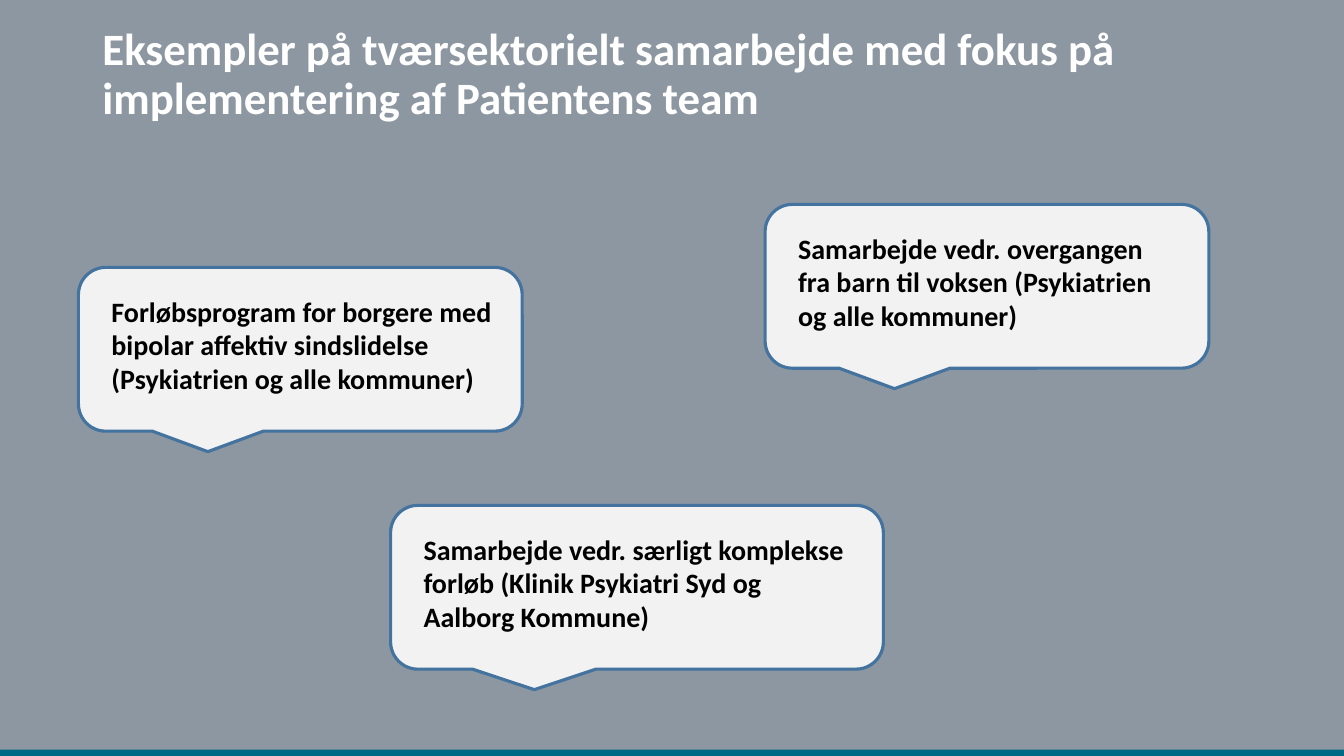
from dataclasses import dataclass

from pptx import Presentation
from pptx.dml.color import RGBColor
from pptx.enum import shapes, text
from pptx.util import Pt


@dataclass(frozen=True)
class Theme:
    font: str = "Calibri"
    title_size: int = 32
    callout_size: int = 20
    background: str = "8D97A1"
    footer: str = "006983"
    title: str = "FFFFFF"
    callout_fill: str = "F2F2F2"
    callout_line: str = "43739E"
    callout_text: str = "000000"


theme = Theme()
WIDTH, HEIGHT = 960, 540


def paint(fill, color):
    fill.solid()
    fill.fore_color.rgb = RGBColor.from_string(color)


def style(paragraph, size, color):
    paragraph.alignment = text.PP_ALIGN.LEFT
    font = paragraph.font
    font.name, font.size, font.bold = theme.font, Pt(size), True
    font.color.rgb = RGBColor.from_string(color)


# Slide and background
prs = Presentation()
prs.slide_width, prs.slide_height = Pt(WIDTH), Pt(HEIGHT)
slide = prs.slides.add_slide(prs.slide_layouts[5])
paint(slide.background.fill, theme.background)

# Footer strip
strip_height = 4.5
footer = slide.shapes.add_shape(
    shapes.MSO_SHAPE.RECTANGLE, 0, Pt(HEIGHT - strip_height), Pt(WIDTH), Pt(strip_height))
footer.shadow.inherit = False
paint(footer.fill, theme.footer)
footer.line.fill.background()

# Title
headline = slide.shapes.title
headline.left, headline.top, headline.width, headline.height = Pt(66), Pt(15), Pt(839), Pt(78)
headline.text_frame.text = (
    "Eksempler på tværsektorielt samarbejde med fokus på implementering af Patientens team")
headline.text_frame.word_wrap = True
headline.text_frame.auto_size = text.MSO_AUTO_SIZE.NONE
headline.text_frame.vertical_anchor = text.MSO_ANCHOR.MIDDLE
headline.text_frame.paragraphs[0].line_spacing = 0.9
style(headline.text_frame.paragraphs[0], theme.title_size, theme.title)

# Examples of collaboration: left, top, callout width, text width, wording
examples = [
    (56, 191, 317, 287,
     "Forløbsprogram for borgere med bipolar affektiv sindslidelse "
     "(Psykiatrien og alle kommuner)"),
    (279, 361, 352, 319,
     "Samarbejde vedr. særligt komplekse forløb (Klinik Psykiatri Syd og Aalborg Kommune)"),
    (546.5, 146, 317, 287,
     "Samarbejde vedr. overgangen fra barn til voksen (Psykiatrien og alle kommuner)"),
]
callout_height, text_height = 117, 101.5
indent_x, indent_y = 16.5, 15.5

for left, top, callout_width, text_width, wording in examples:
    callout = slide.shapes.add_shape(
        shapes.MSO_SHAPE.ROUNDED_RECTANGULAR_CALLOUT,
        Pt(left), Pt(top), Pt(callout_width), Pt(callout_height))
    callout.shadow.inherit = False
    paint(callout.fill, theme.callout_fill)
    paint(callout.line.fill, theme.callout_line)
    callout.line.width = Pt(2.25)

    example = slide.shapes.add_textbox(
        Pt(left + indent_x), Pt(top + indent_y), Pt(text_width), Pt(text_height))
    example.text_frame.word_wrap = True
    example.text_frame.text = wording
    style(example.text_frame.paragraphs[0], theme.callout_size, theme.callout_text)

prs.save("out.pptx")
